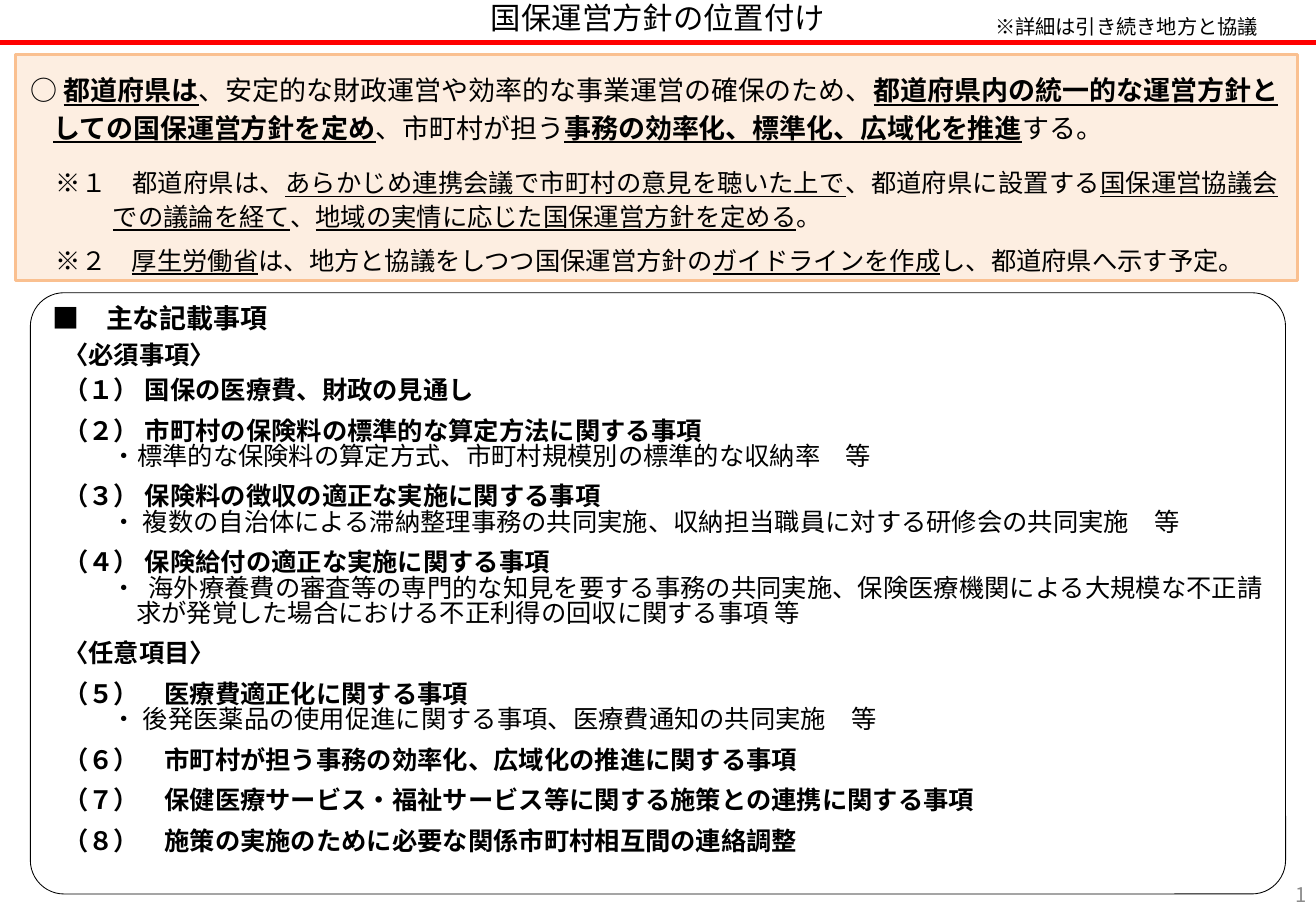
from dataclasses import dataclass
from lxml.etree import SubElement
from pptx import Presentation
from pptx.dml.color import RGBColor
from pptx.enum.shapes import MSO_CONNECTOR as CONN, MSO_SHAPE as SHAPE
from pptx.enum.text import MSO_ANCHOR as ANCHOR, MSO_AUTO_SIZE as AUTO, PP_ALIGN as ALIGN
from pptx.oxml.ns import qn
from pptx.util import Inches, Pt


@dataclass(frozen=True)
class Theme:
    black: RGBColor = RGBColor(0, 0, 0)
    white: RGBColor = RGBColor(255, 255, 255)
    red: RGBColor = RGBColor(255, 0, 0)
    peach: RGBColor = RGBColor(0xFD, 0xEA, 0xDA)
    orange: RGBColor = RGBColor(0xFA, 0xC0, 0x90)
    gray: RGBColor = RGBColor(0x8C, 0x8C, 0x8C)
    cjk: str = "Noto Sans CJK JP"
    bold_latin: str = "Arial"
    note_latin: str = "Calibri"
    title: int = 18
    lead: int = 16
    text: int = 15
    small: int = 12


T = Theme()

SUMMARY = [
    (dict(left=0.19, indent=-0.19, line=22), T.lead, dict(bold=True, underline=True),
     ["○ ", "都道府県は", "、安定的な財政運営や効率的な事業運営の確保のため、",
      "都道府県内の統一的な運営方針としての国保運営方針を定め", "、市町村が担う",
      "事務の効率化、標準化、広域化を推進", "する。"]),
    (dict(left=0.68, indent=-0.47, line=20, before=12), T.text, dict(underline=True),
     ["※１　都道府県は、", "あらかじめ連携会議で市町村の意見を聴いた上で", "、都道府県に設置する",
      "国保運営協議会での議論を経て", "、", "地域の実情に応じた国保運営方針を定める", "。"]),
    (dict(left=0.4, indent=-0.19, line=20, before=6), T.text, dict(underline=True),
     ["※２　", "厚生労働省", "は、地方と協議をしつつ国保運営方針の", "ガイドラインを作成",
      "し、都道府県へ示す予定。"]),
]

HEAD = dict(left=0, before=0), T.lead, True
FIRST = dict(left=0.09, before=6), T.text, True
ITEM = dict(left=0.09, before=9), T.text, True
DETAIL = dict(left=0.49, before=0), T.text, False
HANGING = dict(left=0.69, indent=-0.2, before=0), T.text, False

ITEMS = [
    (HEAD, "■　主な記載事項"),
    (FIRST, "〈必須事項〉"),
    (FIRST, "（１） 国保の医療費、財政の見通し"),
    (ITEM, "（２） 市町村の保険料の標準的な算定方法に関する事項"),
    (DETAIL, "・標準的な保険料の算定方式、市町村規模別の標準的な収納率　等"),
    (ITEM, "（３） 保険料の徴収の適正な実施に関する事項"),
    (DETAIL, "・ 複数の自治体による滞納整理事務の共同実施、収納担当職員に対する研修会の共同実施　等"),
    (ITEM, "（４） 保険給付の適正な実施に関する事項"),
    (HANGING, "・  海外療養費の審査等の専門的な知見を要する事務の共同実施、"
              "保険医療機関による大規模な不正請求が発覚した場合における不正利得の回収に関する事項 等"),
    (ITEM, "〈任意項目〉"),
    (ITEM, "（５）　医療費適正化に関する事項"),
    (DETAIL, "・ 後発医薬品の使用促進に関する事項、医療費通知の共同実施　等"),
    (ITEM, "（６）　市町村が担う事務の効率化、広域化の推進に関する事項"),
    (ITEM, "（７）　保健医療サービス・福祉サービス等に関する施策との連携に関する事項"),
    (ITEM, "（８）　施策の実施のために必要な関係市町村相互間の連絡調整"),
]


def set_attrs(obj, values):
    for name, value in values.items():
        setattr(obj, name, value)


def place(sp, box):
    set_attrs(sp, dict(zip(("left", "top", "width", "height"), map(Inches, box))))


def set_frame(tf, anchor, wrap=True, insets=(0.1, 0.05, 0.1, 0.05)):
    set_attrs(tf, dict(auto_size=AUTO.NONE, word_wrap=wrap, vertical_anchor=anchor))
    names = ("margin_left", "margin_top", "margin_right", "margin_bottom")
    set_attrs(tf, dict(zip(names, map(Inches, insets))))


def style_run(r, size, latin=T.cjk, color=T.black, **formats):
    set_attrs(r.font, dict(name=latin, size=Pt(size), **formats))
    r.font.color.rgb = color
    SubElement(r.font._element, qn("a:ea"), typeface=T.cjk)


def add_run(p, text, size, **formats):
    r = p.add_run()
    r.text = text
    style_run(r, size, **formats)


def next_paragraph(tf, index, left, line, indent=0, before=0):
    p = tf.paragraphs[0] if index == 0 else tf.add_paragraph()
    set_attrs(p, dict(alignment=ALIGN.JUSTIFY, line_spacing=Pt(line),
                      space_before=Pt(before), space_after=Pt(0)))
    pPr = p._p.get_or_add_pPr()
    pPr.set("marL", str(Inches(left)))
    pPr.set("indent", str(Inches(indent)))
    SubElement(pPr, qn("a:buNone"))
    return p


def add_panel(slide, kind, box, fill, line, width):
    sp = slide.shapes.add_shape(kind, *map(Inches, box))
    sp.shadow.inherit = False
    sp.fill.solid()
    sp.fill.fore_color.rgb = fill
    sp.line.color.rgb = line
    sp.line.width = Pt(width)
    return sp


def add_label(slide, box):
    tf = slide.shapes.add_textbox(*map(Inches, box)).text_frame
    set_frame(tf, ANCHOR.MIDDLE)
    return tf.paragraphs[0]


def build_header(slide, box):
    x, y, w, h = box
    rule = slide.shapes.add_connector(CONN.STRAIGHT, *map(Inches, (x, y + h, x + w, y + h)))
    rule.line.color.rgb = T.red
    rule.line.width = Pt(3)
    SubElement(rule._element.spPr, qn("a:effectLst"))
    title = slide.shapes.title
    place(title, (x, y - 0.08, w, h + 0.09))
    set_frame(title.text_frame, ANCHOR.MIDDLE, wrap=False)
    p = title.text_frame.paragraphs[0]
    p.alignment = ALIGN.CENTER
    add_run(p, "国保運営方針の位置付け", T.title)
    note = add_label(slide, (x + 8.09, y - 0.02, 2.69, 0.47))
    add_run(note, "※詳細は引き続き地方と協議", T.small, latin=T.note_latin)


def build_summary(slide, box):
    sp = add_panel(slide, SHAPE.RECTANGLE, box, T.peach, T.orange, 2)
    color = sp._element.spPr.find(qn("a:solidFill")).find(qn("a:srgbClr"))
    SubElement(color, qn("a:alpha"), val="80000")
    tf = sp.text_frame
    set_frame(tf, ANCHOR.TOP, insets=(0.12, 0.12, 0.16, 0.05))
    for i, (layout, size, emphasis, parts) in enumerate(SUMMARY):
        p = next_paragraph(tf, i, **layout)
        for j, text in enumerate(parts):
            add_run(p, text, size, **(emphasis if j % 2 else {}))


def build_items(slide, box):
    x, y, w, h = box
    panel = add_panel(slide, SHAPE.ROUNDED_RECTANGLE, box, T.white, T.black, 0.5)
    panel.adjustments[0] = 0.056
    body = slide.placeholders[1]
    body._element.addprevious(panel._element)
    inset = 0.08
    place(body, (x + inset, y + inset, w - 2 * inset, h - 2 * inset))
    tf = body.text_frame
    set_frame(tf, ANCHOR.TOP)
    for i, ((layout, size, bold), text) in enumerate(ITEMS):
        p = next_paragraph(tf, i, line=15, **layout)
        add_run(p, text, size, latin=T.bold_latin if bold else T.cjk, bold=bold)


def build_page_number(slide, box):
    p = add_label(slide, box)
    p.alignment = ALIGN.RIGHT
    add_run(p, "1", T.small, color=T.gray)
    field = p.runs[0]._r
    field.tag = qn("a:fld")
    set_id = {"id": "{B6F15528-21DE-4FAA-801E-634DDDAF4B2B}", "type": "slidenum"}
    for name, value in set_id.items():
        field.set(name, value)


def main():
    prs = Presentation()
    prs.slide_width, prs.slide_height = Inches(10.83), Inches(7.5)
    slide = prs.slides.add_slide(prs.slide_layouts[1])
    build_header(slide, (0, 0, 10.83, 0.35))
    build_summary(slide, (0.13, 0.45, 10.55, 1.86))
    build_items(slide, (0.25, 2.41, 10.33, 4.95))
    build_page_number(slide, (8.32, 7.16, 2.53, 0.4))
    prs.save("out.pptx")


if __name__ == "__main__":
    main()
